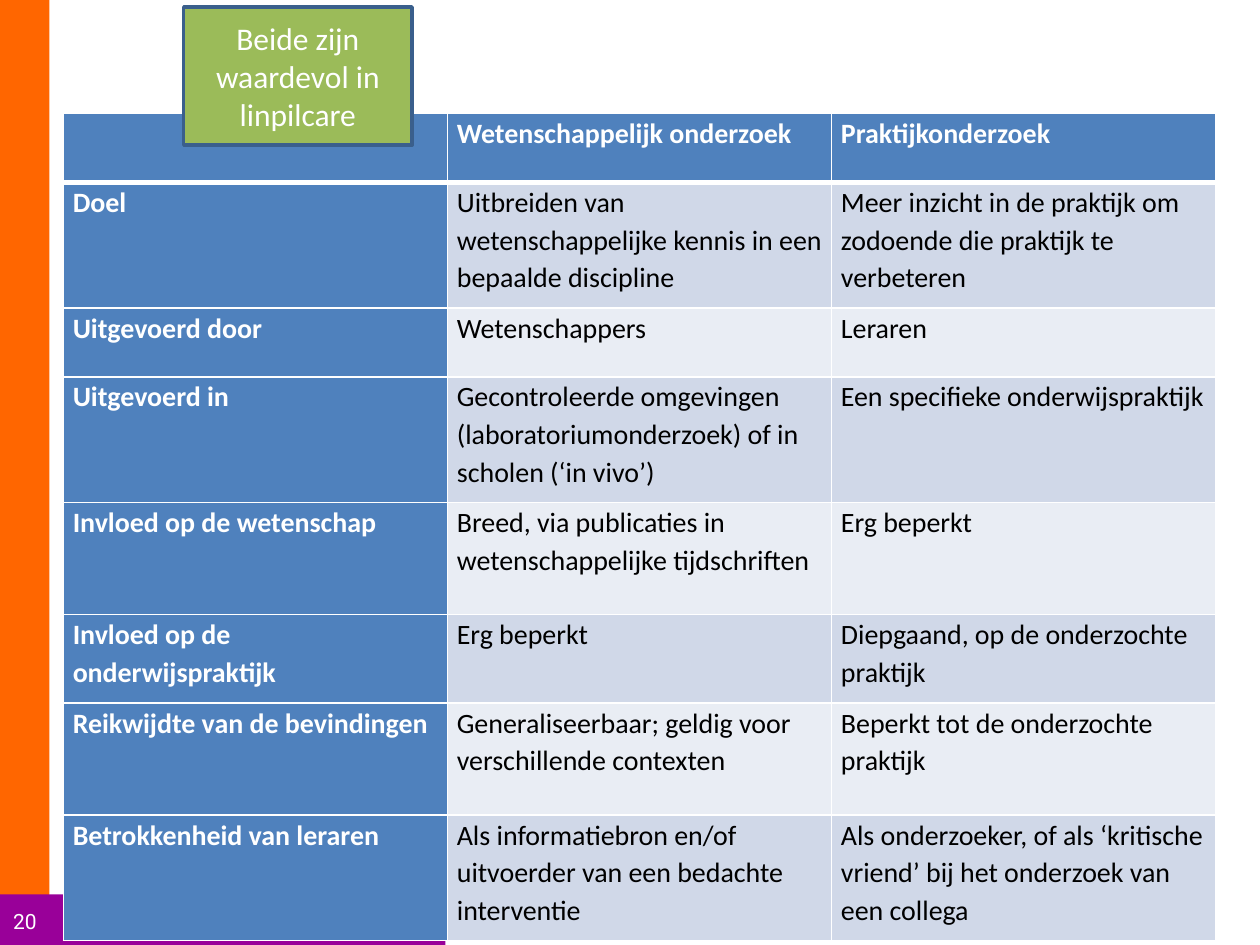
from dataclasses import dataclass

from lxml import etree
from pptx import Presentation
from pptx import util as u
from pptx.dml.color import RGBColor
from pptx.enum import shapes, text
from pptx.oxml import ns


@dataclass(frozen=True)
class Theme:
    orange: str = "FF6600"
    purple: str = "990099"
    green: str = "9BBB59"
    outline: str = "3A5F8C"
    heading: str = "4F81BD"
    bands: tuple = ("E9EDF4", "D0D8E8")
    white: str = "FFFFFF"
    black: str = "000000"
    body_font: str = "Calibri"
    number_font: str = "Roboto"
    number_size: int = 12
    table_size: int = 16
    callout_size: int = 18


class SlideBuilder:
    def __init__(self, slide, theme):
        self.slide = slide
        self.theme = theme

    def style_text(self, frame, wording, size, color, font=None, bold=False):
        frame.text = wording
        frame.word_wrap = True
        paragraph = frame.paragraphs[0]
        for run in paragraph.runs:
            run.font.name = font or self.theme.body_font
            run.font.size = u.Pt(size)
            run.font.bold = bold
            run.font.color.rgb = RGBColor.from_string(color)
        return paragraph

    def block(self, left, top, width, height, fill, outline=None):
        rect = self.slide.shapes.add_shape(
            shapes.MSO_SHAPE.RECTANGLE, *map(u.Pt, (left, top, width, height)))
        rect.shadow.inherit = False
        rect.fill.solid()
        rect.fill.fore_color.rgb = RGBColor.from_string(fill)
        if outline:
            rect.line.color.rgb = RGBColor.from_string(outline)
            rect.line.width = u.Pt(2)
        else:
            rect.line.fill.background()
        return rect

    def callout(self, wording, left, top, width, height):
        box = self.block(left, top, width, height, self.theme.green, self.theme.outline)
        box.text_frame.vertical_anchor = text.MSO_ANCHOR.MIDDLE
        paragraph = self.style_text(
            box.text_frame, wording, self.theme.callout_size, self.theme.white)
        paragraph.alignment = text.PP_ALIGN.CENTER

    def page_number(self, number, left, top, width, height):
        box = self.slide.shapes.add_textbox(*map(u.Pt, (left, top, width, height)))
        box.text_frame.vertical_anchor = text.MSO_ANCHOR.MIDDLE
        self.style_text(box.text_frame, number, self.theme.number_size,
                        self.theme.white, self.theme.number_font)

    def cell_borders(self, cell, bottom, top):
        # Borders come before the fill in the cell properties
        properties = cell._tc.get_or_add_tcPr()
        widths = {"a:lnL": 1, "a:lnR": 1, "a:lnT": top, "a:lnB": bottom}
        for position, (side, width) in enumerate(widths.items()):
            line = etree.Element(ns.qn(side), w=str(u.Pt(width)))
            fill = etree.SubElement(line, ns.qn("a:solidFill"))
            etree.SubElement(fill, ns.qn("a:srgbClr"), val=self.theme.white)
            properties.insert(position, line)

    def cell(self, cell, wording, row, column):
        theme = self.theme
        is_heading = row == 0 or column == 0
        cell.margin_left = cell.margin_right = u.Pt(5.4)
        cell.margin_top, cell.margin_bottom = 0, u.Pt(8.5)
        cell.fill.solid()
        cell.fill.fore_color.rgb = RGBColor.from_string(
            theme.heading if is_heading else theme.bands[row % 2])
        self.cell_borders(cell, bottom=3 if row == 0 else 1, top=3 if row == 1 else 1)
        paragraph = self.style_text(
            cell.text_frame, wording, theme.table_size,
            theme.white if is_heading else theme.black, bold=is_heading)
        paragraph.line_spacing = 1.1

    def table(self, rows, heights, left, top, column_width):
        columns = len(rows[0])
        grid = self.slide.shapes.add_table(
            len(rows), columns, u.Pt(left), u.Pt(top),
            u.Pt(column_width * columns), u.Pt(sum(heights))).table
        for column in grid.columns:
            column.width = u.Pt(column_width)
        for r, (wordings, height) in enumerate(zip(rows, heights)):
            grid.rows[r].height = u.Pt(height)
            for c, wording in enumerate(wordings):
                self.cell(grid.cell(r, c), wording, r, c)


COMPARISON = [
    ("", "Wetenschappelijk onderzoek", "Praktijkonderzoek"),
    ("Doel",
     "Uitbreiden van wetenschappelijke kennis in een bepaalde discipline",
     "Meer inzicht in de praktijk om zodoende die praktijk te verbeteren"),
    ("Uitgevoerd door", "Wetenschappers", "Leraren"),
    ("Uitgevoerd in",
     "Gecontroleerde omgevingen (laboratoriumonderzoek) of in scholen (‘in vivo’)",
     "Een specifieke onderwijspraktijk"),
    ("Invloed op de wetenschap",
     "Breed, via publicaties in wetenschappelijke tijdschriften",
     "Erg beperkt"),
    ("Invloed op de onderwijspraktijk",
     "Erg beperkt",
     "Diepgaand, op de onderzochte praktijk"),
    ("Reikwijdte van de bevindingen",
     "Generaliseerbaar; geldig voor verschillende contexten",
     "Beperkt tot de onderzochte praktijk"),
    ("Betrokkenheid van leraren",
     "Als informatiebron en/of uitvoerder van een bedachte interventie",
     "Als onderzoeker, of als ‘kritische vriend’ bij het onderzoek van een collega"),
]
ROW_HEIGHTS = [39.4, 70, 39.4, 70, 64, 49, 64, 70]


def main():
    deck = Presentation()
    deck.slide_width, deck.slide_height = u.Pt(720), u.Pt(540)
    theme = Theme()
    builder = SlideBuilder(deck.slides.add_slide(deck.slide_layouts[6]), theme)

    # Side band and footer with the page number
    builder.block(0, 0, 28.3, 512, theme.orange)
    builder.block(-0.5, 511, 255, 29.5, theme.purple)
    builder.page_number("20", 0.5, 511, 50, 31)

    # Comparison of the two kinds of research
    builder.table(COMPARISON, ROW_HEIGHTS, left=36.2, top=64.8, column_width=219.5)

    # Remark on top of the table
    builder.callout("Beide zijn waardevol in linpilcare", 105, 4, 130.5, 79)

    deck.save("out.pptx")


if __name__ == "__main__":
    main()
